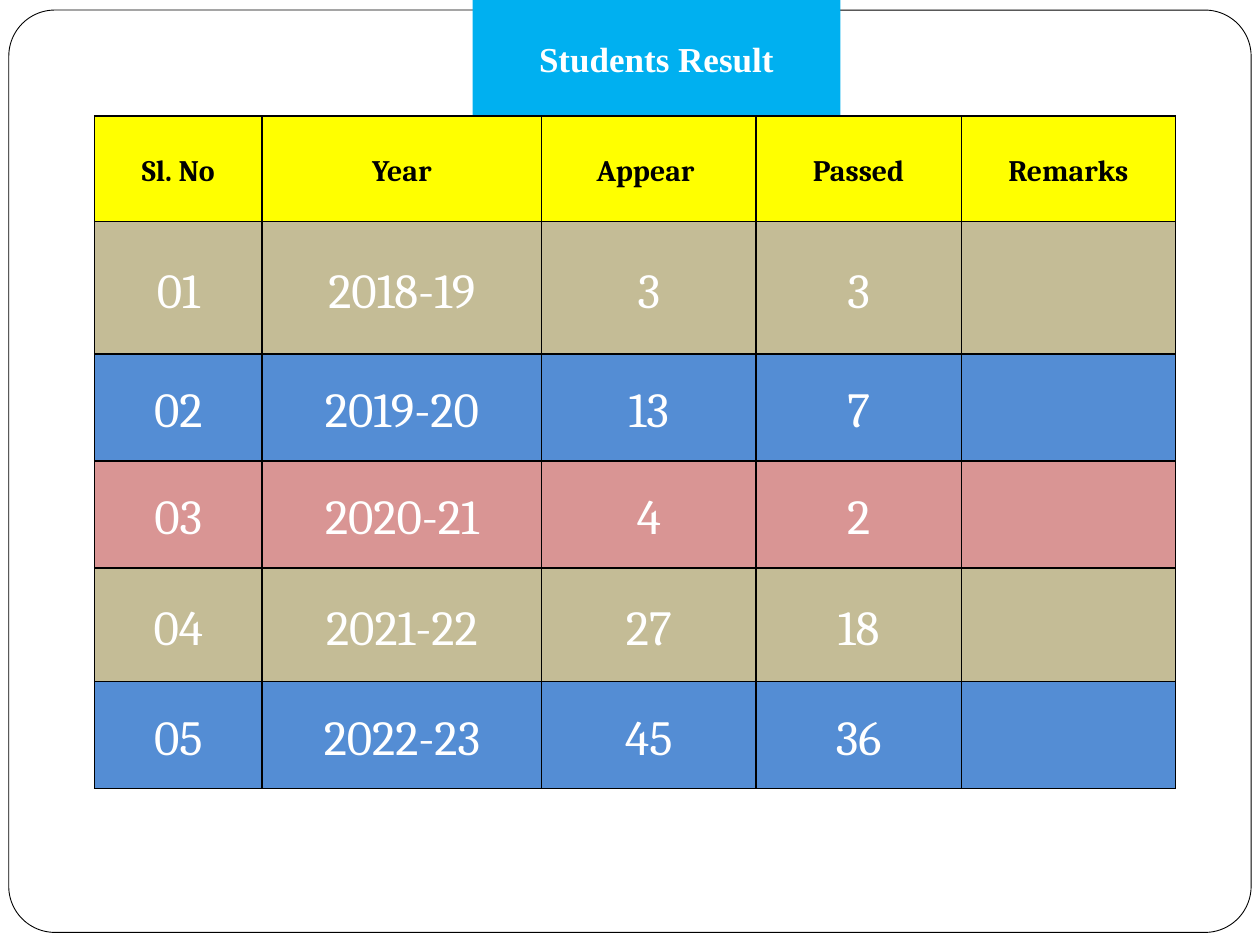
"""Build a slide with a table of student results by year."""
from lxml import etree
from pptx import Presentation
from pptx.dml.color import RGBColor
from pptx.enum import shapes, text
from pptx.oxml import parse_xml
from pptx.util import Inches, Pt

BLACK = RGBColor(0x00, 0x00, 0x00)
WHITE = RGBColor(0xFF, 0xFF, 0xFF)
CYAN = RGBColor(0x00, 0xB0, 0xF0)
YELLOW = RGBColor(0xFF, 0xFF, 0x00)
TAN = RGBColor(0xC4, 0xBC, 0x96)
BLUE = RGBColor(0x54, 0x8D, 0xD4)
PINK = RGBColor(0xD9, 0x95, 0x94)
NS = "http://schemas.openxmlformats.org/drawingml/2006/main"

ROWS = [
    ("Sl. No", "Year", "Appear ", "Passed", "Remarks"),
    ("01", "2018-19", "3", "3", ""),
    ("02", "2019-20", "13", "7", ""),
    ("03", "2020-21", "4", "2", ""),
    ("04", "2021-22", "27", "18", ""),
    ("05", "2022-23", "45", "36", ""),
]
FILLS = [YELLOW, TAN, BLUE, PINK, TAN, BLUE]
COL_WIDTHS = [1.33, 2.22, 1.7, 1.63, 1.7]
ROW_HEIGHTS = [0.84, 1.05, 0.85, 0.85, 0.9, 0.85]


def set_font(p, name, size, color, bold):
    p.alignment = text.PP_ALIGN.CENTER
    for r in p.runs:
        r.font.name = name
        r.font.size = Pt(size)
        r.font.color.rgb = color
        r.font.bold = bold


def add_borders(cell):
    tcPr = cell._tc.get_or_add_tcPr()
    for side in ("lnL", "lnR", "lnT", "lnB"):
        tcPr.append(parse_xml(
            f'<a:{side} xmlns:a="{NS}" w="{Pt(1)}"><a:solidFill>'
            f'<a:srgbClr val="{BLACK}"/></a:solidFill></a:{side}>'))


prs = Presentation()
prs.slide_width, prs.slide_height = Inches(10), Inches(7.5)
s = prs.slides.add_slide(prs.slide_layouts[5])

frame = s.shapes.add_shape(shapes.MSO_SHAPE.ROUNDED_RECTANGLE,
                           Inches(0.07), Inches(0.08), Inches(9.86), Inches(7.32))
frame.adjustments[0] = 0.05
frame.shadow.inherit = False
frame.fill.solid()
frame.fill.fore_color.rgb = WHITE
frame.line.color.rgb = BLACK
frame.line.width = Pt(0.5)

title = s.shapes.title
frame._element.addnext(title._element)
title.left, title.top = Inches(3.75), Inches(0.25)
title.width, title.height = Inches(2.92), Inches(0.43)
title.fill.solid()
title.fill.fore_color.rgb = CYAN
tf = title.text_frame
tf.text = "Students Result"
tf.word_wrap = True
tf.auto_size = text.MSO_AUTO_SIZE.SHAPE_TO_FIT_TEXT
tf.vertical_anchor = text.MSO_ANCHOR.MIDDLE
set_font(tf.paragraphs[0], "Times New Roman", 20, WHITE, True)

table = s.shapes.add_table(len(ROWS), len(COL_WIDTHS), Inches(0.75), Inches(0.92),
                           Inches(sum(COL_WIDTHS)), Inches(sum(ROW_HEIGHTS))).table
for column, width in zip(table.columns, COL_WIDTHS):
    column.width = Inches(width)
for i, (row, values) in enumerate(zip(table.rows, ROWS)):
    row.height = Inches(ROW_HEIGHTS[i])
    header = i == 0
    for cell, value in zip(row.cells, values):
        add_borders(cell)
        cell.fill.solid()
        cell.fill.fore_color.rgb = FILLS[i]
        cell.margin_left = cell.margin_right = Inches(0.04)
        cell.margin_top = cell.margin_bottom = 0
        cell.vertical_anchor = text.MSO_ANCHOR.MIDDLE
        cell.text = value
        p = cell.text_frame.paragraphs[0]
        p.line_spacing = 1.15
        set_font(p, "Cambria", 17 if header else 28, BLACK if header else WHITE, header)

prs.save("out.pptx")
